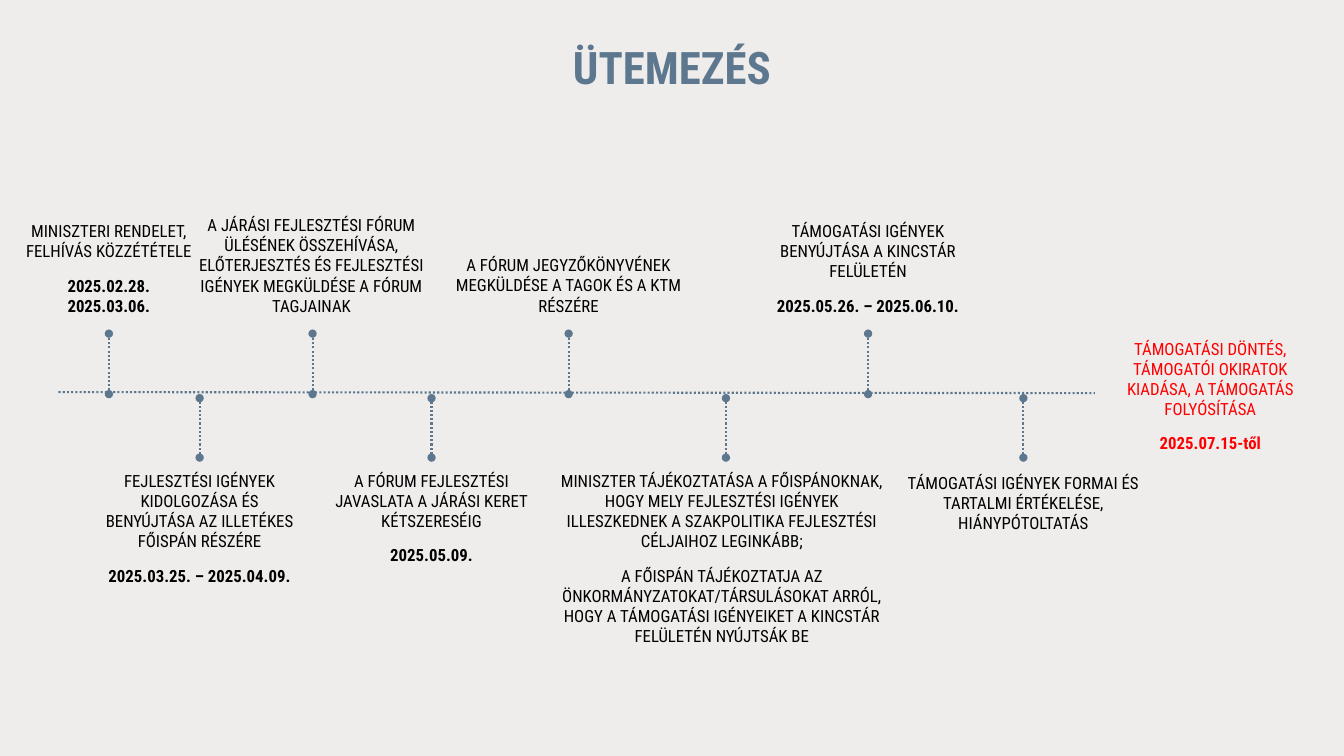
import dataclasses

import lxml.etree
import pptx
import pptx.dml.color
import pptx.enum.dml
import pptx.enum.shapes
import pptx.enum.text
import pptx.oxml.ns
import pptx.util

PX = 9144  # 100 px to the inch
WIDE, HIGH = 1333, 750
ANCHOR = pptx.enum.text.MSO_ANCHOR
TRIM, ROOMY = (10, 5), (13, 7)  # side and top padding of a label


@dataclasses.dataclass(frozen=True)
class Theme:
    font: str = "Roboto Condensed"
    back: str = "EFEDEC"
    main: str = "5C778E"
    ink: str = "000000"
    alert: str = "FF0000"
    head: int = 32
    body: int = 12
    gap: int = 10
    rule: float = 1.5


THEME = Theme()


@dataclasses.dataclass(frozen=True)
class Step:
    stem: int
    wide: int
    text: tuple
    dates: tuple = ()
    pad: tuple = TRIM
    shift: int = 0  # label centre against its stem
    drop: int = 0


UPPER = [
    Step(108, 197, ("MINISZTERI RENDELET, FELHÍVÁS KÖZZÉTÉTELE",),
         ("2025.02.28.", "2025.03.06.")),
    Step(310, 256, ("A JÁRÁSI FEJLESZTÉSI FÓRUM ÜLÉSÉNEK ÖSSZEHÍVÁSA, "
                    "ELŐTERJESZTÉS ÉS FEJLESZTÉSI IGÉNYEK MEGKÜLDÉSE A FÓRUM TAGJAINAK",),
         shift=-1),
    Step(564, 256, ("A FÓRUM JEGYZŐKÖNYVÉNEK MEGKÜLDÉSE A TAGOK ÉS A KTM RÉSZÉRE",),
         pad=ROOMY, drop=2),
    Step(861, 256, ("TÁMOGATÁSI IGÉNYEK BENYÚJTÁSA A KINCSTÁR FELÜLETÉN",),
         ("2025.05.26. – 2025.06.10.",), pad=ROOMY, drop=2),
]
LOWER = [
    Step(198, 222, ("FEJLESZTÉSI IGÉNYEK KIDOLGOZÁSA ÉS BENYÚJTÁSA AZ ILLETÉKES "
                    "FŐISPÁN RÉSZÉRE",), ("2025.03.25. – 2025.04.09.",)),
    Step(428, 255, ("A FÓRUM FEJLESZTÉSI JAVASLATA A JÁRÁSI KERET KÉTSZERESÉIG",),
         ("2025.05.09.",)),
    Step(720, 342, ("MINISZTER TÁJÉKOZTATÁSA A FŐISPÁNOKNAK, HOGY MELY FEJLESZTÉSI "
                    "IGÉNYEK ILLESZKEDNEK A SZAKPOLITIKA FEJLESZTÉSI CÉLJAIHOZ LEGINKÁBB;",
                    "A FŐISPÁN TÁJÉKOZTATJA AZ ÖNKORMÁNYZATOKAT/TÁRSULÁSOKAT ARRÓL, HOGY "
                    "A TÁMOGATÁSI IGÉNYEIKET A KINCSTÁR FELÜLETÉN NYÚJTSÁK BE"), shift=-4),
    Step(1015, 256, ("TÁMOGATÁSI IGÉNYEK FORMAI ÉS TARTALMI ÉRTÉKELÉSE, "
                     "HIÁNYPÓTOLTATÁS",), drop=2),
]


def px(*vals):
    return [pptx.util.Emu(round(val * PX)) for val in vals]


def rgb(tone):
    return pptx.dml.color.RGBColor.from_string(tone)


def write(para, text, size, tone, bold=False):
    para.alignment = pptx.enum.text.PP_ALIGN.CENTER
    run = para.add_run()
    run.text = text
    font = run.font
    font.name, font.size, font.bold = THEME.font, pptx.util.Pt(size), bold
    font.color.rgb = rgb(tone)


def label(slide, box, text, dates, anchor, pad=TRIM, tone=THEME.ink):
    """Centred wording with its bold dates below, set tight together."""
    frame = slide.shapes.add_textbox(*px(*box)).text_frame
    frame.word_wrap = True
    frame.vertical_anchor = anchor
    frame.margin_left = frame.margin_right = px(pad[0])[0]
    frame.margin_top = frame.margin_bottom = px(pad[1])[0]
    for i, line in enumerate(text + dates):
        para = frame.paragraphs[0] if i == 0 else frame.add_paragraph()
        para.space_before = pptx.util.Pt(THEME.gap if i <= len(text) else 0)
        write(para, line, THEME.body, tone, bold=i >= len(text))


def dotted(slide, ends, ovals=False):
    kind = pptx.enum.shapes.MSO_CONNECTOR.STRAIGHT
    link = slide.shapes.add_connector(kind, *px(*ends))
    link.line.color.rgb = rgb(THEME.main)
    link.line.width = pptx.util.Pt(THEME.rule)
    link.line.dash_style = pptx.enum.dml.MSO_LINE.ROUND_DOT
    qn = pptx.oxml.ns.qn
    props = link._element.spPr
    if ovals:
        for tag in ("a:headEnd", "a:tailEnd"):
            lxml.etree.SubElement(props.find(qn("a:ln")), qn(tag), type="oval")
    lxml.etree.SubElement(props, qn("a:effectLst"))


def title(slide, box, text):
    shape = slide.shapes.title
    shape.left, shape.top, shape.width, shape.height = px(*box)
    frame = shape.text_frame
    frame.auto_size = pptx.enum.text.MSO_AUTO_SIZE.NONE
    frame.vertical_anchor = ANCHOR.TOP
    frame.paragraphs[0].line_spacing = 0.9
    write(frame.paragraphs[0], text, THEME.head, THEME.main, bold=True)


def above(slide, box):
    """Steps over the axis: labels sit on stems that rise from it."""
    left, top, _, high = box
    foot = top + high
    for step in UPPER:
        mid = left + step.stem
        dotted(slide, (mid, foot, mid, foot - 60), ovals=True)
        area = (mid + step.shift - step.wide / 2, top, step.wide, 159 + step.drop)
        label(slide, area, step.text, step.dates, ANCHOR.BOTTOM, step.pad)


def below(slide, box):
    """Steps under the axis: labels hang from stems."""
    left, top, _, high = box
    for step in LOWER:
        mid = left + step.stem
        dotted(slide, (mid, top + 59, mid, top), ovals=True)
        area = (mid + step.shift - step.wide / 2, top + 67 + step.drop,
                step.wide, high - 67)
        label(slide, area, step.text, step.dates, ANCHOR.TOP, step.pad)


def final(slide, box):
    label(slide, box,
          ("TÁMOGATÁSI DÖNTÉS, TÁMOGATÓI OKIRATOK KIADÁSA, A TÁMOGATÁS FOLYÓSÍTÁSA",),
          ("2025.07.15-től",), ANCHOR.MIDDLE, tone=THEME.alert)


def main():
    deck = pptx.Presentation()
    deck.slide_width, deck.slide_height = px(WIDE, HIGH)
    slide = deck.slides.add_slide(deck.slide_layouts.get_by_name("Title Only"))
    slide.background.fill.solid()
    slide.background.fill.fore_color.rgb = rgb(THEME.back)

    title(slide, (0, 40, WIDE, 83), "ÜTEMEZÉS")
    # Time axis
    dotted(slide, (58, 389, 1086, 390))
    # Steps on both sides, then the decision
    above(slide, (0, 159, WIDE, 232))
    below(slide, (0, 395, WIDE, 247))
    final(slide, (1094, 332, 213, 121))
    deck.save("out.pptx")


if __name__ == "__main__":
    main()
